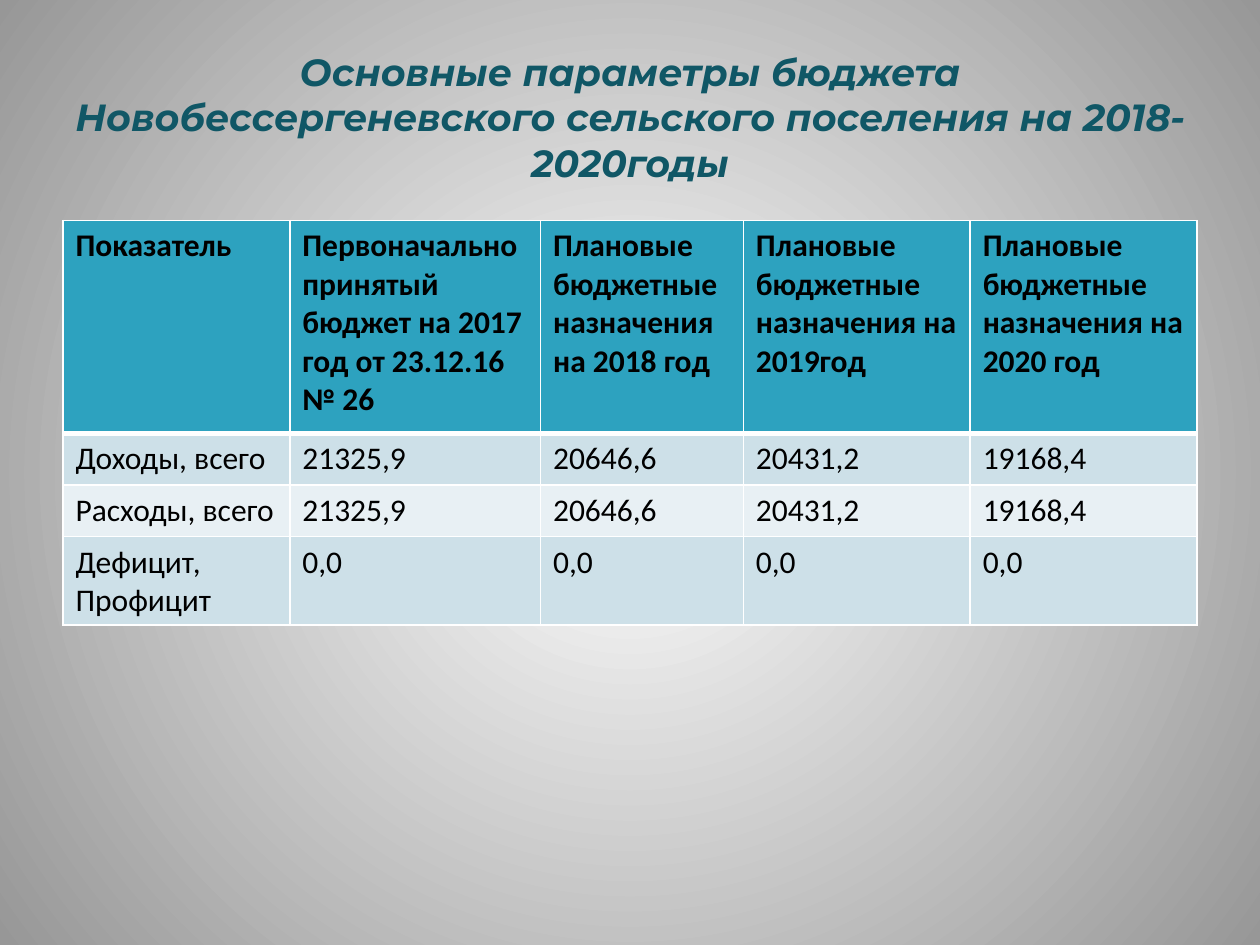
from lxml.etree import SubElement
from pptx import Presentation
from pptx.dml.color import RGBColor
from pptx.enum.text import MSO_ANCHOR, PP_ALIGN
from pptx.oxml.ns import qn
from pptx.util import Inches, Pt

TITLE = "Основные параметры бюджета Новобессергеневского сельского поселения на 2018-2020годы"
BUDGET = [
    ["Показатель", "Первоначально принятый бюджет на 2017 год от 23.12.16 № 26",
     "Плановые бюджетные назначения на 2018 год",
     "Плановые бюджетные назначения на 2019год",
     "Плановые бюджетные назначения на 2020 год"],
    ["Доходы, всего", "21325,9", "20646,6", "20431,2", "19168,4"],
    ["Расходы, всего", "21325,9", "20646,6", "20431,2", "19168,4"],
    ["Дефицит, Профицит", "0,0", "0,0", "0,0", "0,0"],
]
COLUMN_WIDTHS = [1.8, 1.99, 1.61, 1.8, 1.8]
ROW_HEIGHTS = [1.69, 0.41, 0.41, 0.69]
LEFT, WIDTH = 0.5, 9

THEME = {
    "title_font": "Montserrat", "title_size": 21.6, "title": "105766",
    "body_font": "Calibri", "body_size": 18, "body": "000000",
    "header": "2DA2BF", "bands": ["CDE0E8", "E8F0F4"],
    "border": "FFFFFF", "thin": 1, "thick": 3,
    "background": ["FFFFFF", "979797"],
}


def write(frame, text, *, font, size, color, bold=False, italic=False, align=PP_ALIGN.LEFT):
    paragraph = frame.paragraphs[0]
    paragraph.alignment = align
    span = paragraph.add_run()
    span.text = text
    span.font.name, span.font.size = font, Pt(size)
    span.font.bold, span.font.italic = bold, italic
    span.font.color.rgb = RGBColor.from_string(color)


def set_background(page):
    """Radial gradient, from the centre of the page to its corners."""
    fill = page.background.fill
    fill.gradient()
    for stop, color in zip(fill.gradient_stops, THEME["background"]):
        stop.color.rgb = RGBColor.from_string(color)
    gradient = next(page.element.iter(qn("a:gradFill")))
    gradient.remove(gradient.find(qn("a:lin")))
    circle = SubElement(gradient, qn("a:path"), path="circle")
    SubElement(circle, qn("a:fillToRect"), l="50000", t="50000", r="50000", b="50000")


def set_borders(cell, **widths):
    """Draw the sides L, R, T and B, in that order, with widths in points."""
    properties = cell._tc.get_or_add_tcPr()
    for side, width in widths.items():
        line = SubElement(properties, qn(f"a:ln{side}"), w=str(Pt(width)))
        solid = SubElement(line, qn("a:solidFill"))
        SubElement(solid, qn("a:srgbClr"), val=THEME["border"])


def add_title(page):
    box = page.shapes.add_textbox(Inches(LEFT), Inches(0.3), Inches(WIDTH), Inches(1.25))
    frame = box.text_frame
    frame.word_wrap = True
    frame.vertical_anchor = MSO_ANCHOR.MIDDLE
    write(frame, TITLE, font=THEME["title_font"], size=THEME["title_size"],
          color=THEME["title"], bold=True, italic=True, align=PP_ALIGN.CENTER)


def add_budget_table(page):
    table = page.shapes.add_table(
        len(BUDGET), len(COLUMN_WIDTHS), Inches(LEFT), Inches(1.75),
        Inches(WIDTH), Inches(sum(ROW_HEIGHTS))).table
    for column, width in zip(table.columns, COLUMN_WIDTHS):
        column.width = Inches(width)
    thin, thick = THEME["thin"], THEME["thick"]
    for index, (row, height, texts) in enumerate(zip(table.rows, ROW_HEIGHTS, BUDGET)):
        row.height = Inches(height)
        is_header = index == 0
        color = THEME["header"] if is_header else THEME["bands"][(index - 1) % 2]
        for cell, text in zip(row.cells, texts):
            set_borders(cell, L=thin, R=thin, T=thick if index == 1 else thin,
                        B=thick if is_header else thin)
            cell.fill.solid()
            cell.fill.fore_color.rgb = RGBColor.from_string(color)
            write(cell.text_frame, text, font=THEME["body_font"], size=THEME["body_size"],
                  color=THEME["body"], bold=is_header)


def main():
    deck = Presentation()
    deck.slide_width, deck.slide_height = Inches(10), Inches(7.5)
    page = deck.slides.add_slide(deck.slide_layouts[6])
    set_background(page)
    add_title(page)
    add_budget_table(page)
    deck.save("out.pptx")


if __name__ == "__main__":
    main()
